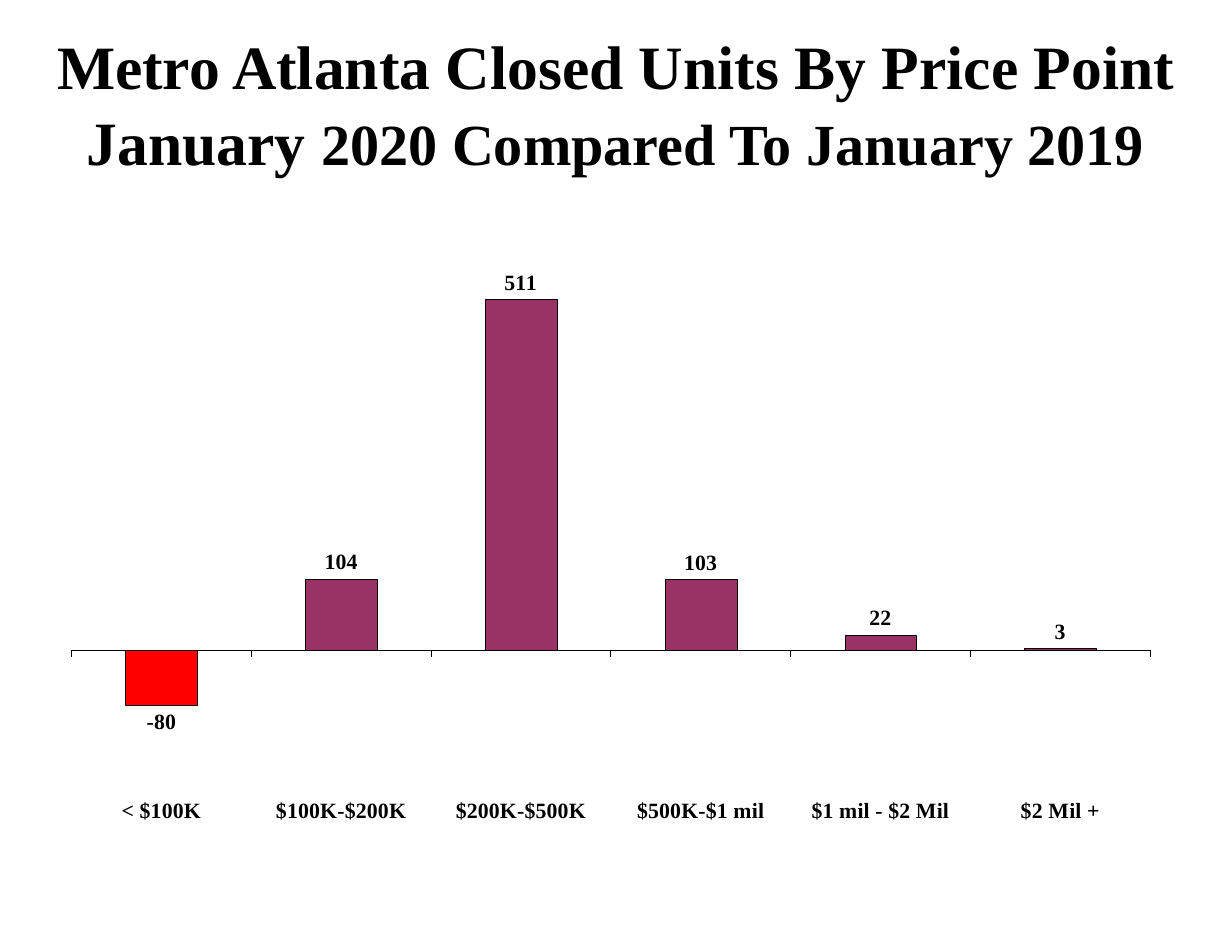
from lxml import etree
from pptx import Presentation
from pptx import util as u
from pptx.chart import data
from pptx.dml import color
from pptx.enum import chart as ch, text
from pptx.oxml import ns

HUES = {"ink": "000000", "bar": "993366", "loss": "FF0000"}
UNITS = {
    "< $100K": -80,
    "$100K-$200K": 104,
    "$200K-$500K": 511,
    "$500K-$1 mil": 103,
    "$1 mil - $2 Mil": 22,
    "$2 Mil +": 3,
}


def apply(item, **vals):
    for key, val in vals.items():
        setattr(item, key, val)


class Deck:
    face = "Times New Roman"

    def __init__(self, wide, high):
        self.prs = Presentation()
        apply(self.prs, slide_width=u.Pt(wide), slide_height=u.Pt(high))
        self.slide = self.prs.slides.add_slide(self.prs.slide_layouts[6])

    def hue(self, name):
        return color.RGBColor.from_string(HUES[name])

    def font(self, font, size):
        apply(font, name=self.face, size=u.Pt(size), bold=True)
        font.color.rgb = self.hue("ink")

    def fill(self, form, name):
        form.fill.solid()
        form.fill.fore_color.rgb = self.hue(name)
        self.line(form.line, 0.06)

    def line(self, line, width):
        line.color.rgb = self.hue("ink")
        line.width = u.Pt(width)

    def title(self, box, runs):
        frame = self.slide.shapes.add_textbox(*map(u.Pt, box)).text_frame
        apply(frame, word_wrap=True, vertical_anchor=text.MSO_ANCHOR.MIDDLE,
              margin_left=0, margin_right=0, margin_top=0, margin_bottom=0)
        para = frame.paragraphs[0]
        apply(para, alignment=text.PP_ALIGN.CENTER, line_spacing=1.03)
        for words, size in runs:
            for i, part in enumerate(words.split("\n")):
                if i:
                    para.add_line_break()
                run = para.add_run()
                run.text = part
                self.font(run.font, size)

    def place(self, chart, **spots):
        area = chart.plots[0]._element.getparent()
        for old in area.findall(ns.qn("c:layout")):
            area.remove(old)
        layout = etree.Element(ns.qn("c:layout"))
        area.insert(0, layout)
        manual = etree.SubElement(layout, ns.qn("c:manualLayout"))
        vals = {"layoutTarget": "inner", "xMode": "edge", "yMode": "edge", **spots}
        for tag, val in vals.items():
            etree.SubElement(manual, ns.qn("c:" + tag)).set("val", str(val))

    def columns(self, box, units, low, high):
        feed = data.CategoryChartData(number_format="0")
        feed.categories = list(units)
        feed.add_series("Series 1", list(units.values()))
        chart = self.slide.shapes.add_chart(
            ch.XL_CHART_TYPE.COLUMN_CLUSTERED, *map(u.Pt, box), feed).chart
        apply(chart, has_legend=False, has_title=False)
        self.font(chart.font, 14)
        apply(chart.value_axis, visible=False, has_major_gridlines=False,
              minimum_scale=low, maximum_scale=high)
        axis = chart.category_axis
        apply(axis, tick_label_position=ch.XL_TICK_LABEL_POSITION.LOW,
              major_tick_mark=ch.XL_TICK_MARK.OUTSIDE,
              minor_tick_mark=ch.XL_TICK_MARK.NONE)
        self.line(axis.format.line, 0.01)
        plot = chart.plots[0]
        apply(plot, gap_width=150, vary_by_categories=False, has_data_labels=True)
        apply(plot.data_labels, show_value=True, number_format="0",
              number_format_is_linked=False,
              position=ch.XL_LABEL_POSITION.OUTSIDE_END)
        self.font(plot.data_labels.font, 14)
        bars = plot.series[0]
        bars.invert_if_negative = False
        self.fill(bars.format, "bar")
        for i, val in enumerate(units.values()):
            if val < 0:
                self.fill(bars.points[i].format, "loss")
        self.place(chart, x=0, y=0.21, w=0.88, h=0.71)


def main():
    deck = Deck(792, 612)
    deck.title((0, 49, 792, 33), [
        ("Metro Atlanta Closed Units By Price Point\nJanuary ", 39.6),
        ("2020 Compared To January 2019", 37.4),
    ])
    deck.columns((46, 49, 788, 497), UNITS, -200, 600)
    deck.prs.save("out.pptx")


if __name__ == "__main__":
    main()
